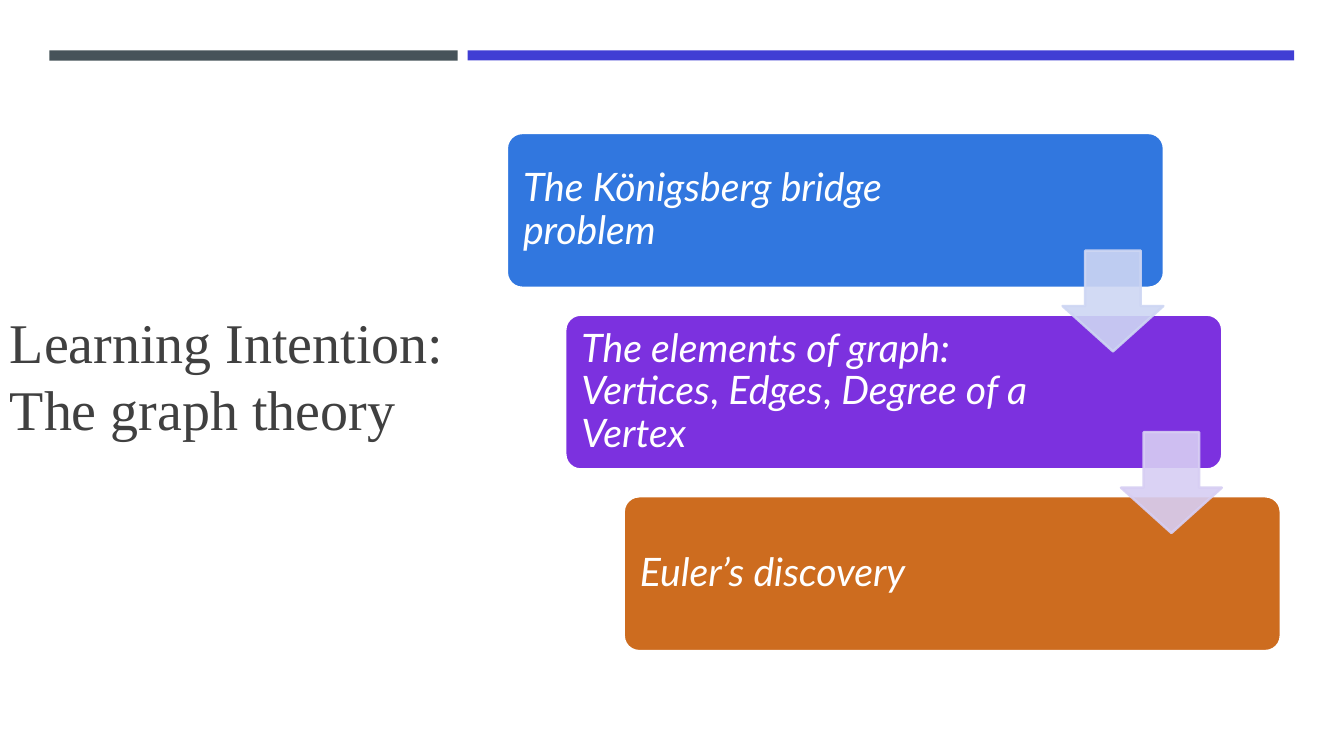
from typing import NamedTuple

from lxml.etree import SubElement
from pptx import Presentation
from pptx.dml.color import RGBColor
from pptx.enum.shapes import MSO_SHAPE as Preset
from pptx.enum.text import MSO_ANCHOR as Anchor, PP_ALIGN as Align
from pptx.oxml.ns import qn
from pptx.shapes.autoshape import Shape
from pptx.slide import Slide
from pptx.util import Pt

WHITE = RGBColor(0xFF, 0xFF, 0xFF)
TITLE_GREY = RGBColor(0x40, 0x40, 0x40)
SLATE = RGBColor(0x46, 0x53, 0x59)
INDIGO = RGBColor(0x40, 0x3E, 0xD4)
BLUE = RGBColor(0x31, 0x77, 0xDF)
PURPLE = RGBColor(0x7C, 0x31, 0xDF)
ORANGE = RGBColor(0xCD, 0x6C, 0x1F)
PALE_BLUE = RGBColor(0xCE, 0xD6, 0xF3)
PALE_PURPLE = RGBColor(0xD7, 0xCE, 0xF3)

SLIDE_WIDTH, SLIDE_HEIGHT = 960, 540
STEP_LEFT, STEP_TOP = 362, 95
STEP_WIDTH, STEP_HEIGHT = 469.4, 110.6
SHIFT_X, SHIFT_Y = 41.75, 129.75
LABEL_INSET, LABEL_WIDTH = 3.25, 349
ARROW_LEFT, ARROW_TOP, ARROW_SIZE = 759, 179, 72
ARROW_OPACITY = 90


class Box(NamedTuple):
    left: float
    top: float
    width: float
    height: float

    def shifted(self, index: int) -> "Box":
        """Move the box down the staircase by index steps."""
        return self._replace(left=self.left + index * SHIFT_X, top=self.top + index * SHIFT_Y)

    def lengths(self) -> list[Pt]:
        return [Pt(value) for value in self]


class Bar(NamedTuple):
    box: Box
    color: RGBColor


class Step(NamedTuple):
    runs: list[str]  # a run that is only a comma stays upright
    color: RGBColor


BARS = [
    Bar(Box(0, 0, SLIDE_WIDTH, SLIDE_HEIGHT), WHITE),
    Bar(Box(35.3, 36, 291.6, 7.4), SLATE),
    Bar(Box(334.1, 36, 590.4, 7.2), INDIGO),
]
STEPS = [
    Step(["The Königsberg bridge problem"], BLUE),
    Step(["The elements of graph: Vertices", ", ", "Edges", ", ", "Degree of a Vertex"], PURPLE),
    Step(["Euler’s discovery"], ORANGE),
]
ARROW_COLORS = [PALE_BLUE, PALE_PURPLE]


def add_filled(slide: Slide, preset: Preset, box: Box, fill: RGBColor,
               line: RGBColor | None = None) -> Shape:
    shape = slide.shapes.add_shape(preset, *box.lengths())
    shape.shadow.inherit = False
    shape.fill.solid()
    shape.fill.fore_color.rgb = fill
    if line is None:
        shape.line.fill.background()
    else:
        shape.line.color.rgb = line
        shape.line.width = Pt(1.75)
    return shape


def add_text(slide: Slide, box: Box, runs: list[str], font_name: str, size: float,
             color: RGBColor, inset_x: float, inset_y: float) -> Shape:
    shape = slide.shapes.add_textbox(*box.lengths())
    frame = shape.text_frame
    frame.word_wrap = True
    frame.vertical_anchor = Anchor.MIDDLE
    frame.margin_left = frame.margin_right = Pt(inset_x)
    frame.margin_top = frame.margin_bottom = Pt(inset_y)
    paragraph = frame.paragraphs[0]
    paragraph.alignment = Align.LEFT
    paragraph.font.name = font_name
    paragraph.font.size = Pt(size)
    paragraph.font.color.rgb = color
    for text in runs:
        paragraph.add_run().text = text
    return shape


def add_step(slide: Slide, index: int, step: Step) -> None:
    box = Box(STEP_LEFT, STEP_TOP, STEP_WIDTH, STEP_HEIGHT).shifted(index)
    panel = add_filled(slide, Preset.ROUNDED_RECTANGLE, box, step.color, WHITE)
    panel.adjustments[0] = 0.1
    label_box = Box(box.left + LABEL_INSET, box.top + LABEL_INSET,
                    LABEL_WIDTH, box.height - 2 * LABEL_INSET)
    label = add_text(slide, label_box, step.runs, "Lato", 28, WHITE, 8.4, 8.4)
    paragraph = label.text_frame.paragraphs[0]
    paragraph.line_spacing = 0.9
    for run in paragraph.runs:
        run.font.italic = run.text != ", "


def add_arrow(slide: Slide, index: int, color: RGBColor) -> None:
    """Draw a translucent arrow from one step to the next."""
    box = Box(ARROW_LEFT, ARROW_TOP, ARROW_SIZE, ARROW_SIZE).shifted(index)
    arrow = add_filled(slide, Preset.DOWN_ARROW, box, color, color)
    arrow.adjustments[0] = 0.55
    arrow.adjustments[1] = 0.45
    for color_element in arrow.element.spPr.iter(qn("a:srgbClr")):
        SubElement(color_element, qn("a:alpha"), val=str(ARROW_OPACITY * 1000))


def main() -> None:
    presentation = Presentation()
    presentation.slide_width = Pt(SLIDE_WIDTH)
    presentation.slide_height = Pt(SLIDE_HEIGHT)
    slide = presentation.slides.add_slide(presentation.slide_layouts[6])
    for bar in BARS:
        add_filled(slide, Preset.RECTANGLE, bar.box, bar.color)
    add_text(slide, Box(0, 82, 350.6, 371), ["Learning Intention: The graph theory"],
             "Times New Roman", 40, TITLE_GREY, 7.2, 3.6)
    for index, step in enumerate(STEPS):
        add_step(slide, index, step)
    for index, color in enumerate(ARROW_COLORS):
        add_arrow(slide, index, color)
    presentation.save("out.pptx")


if __name__ == "__main__":
    main()
